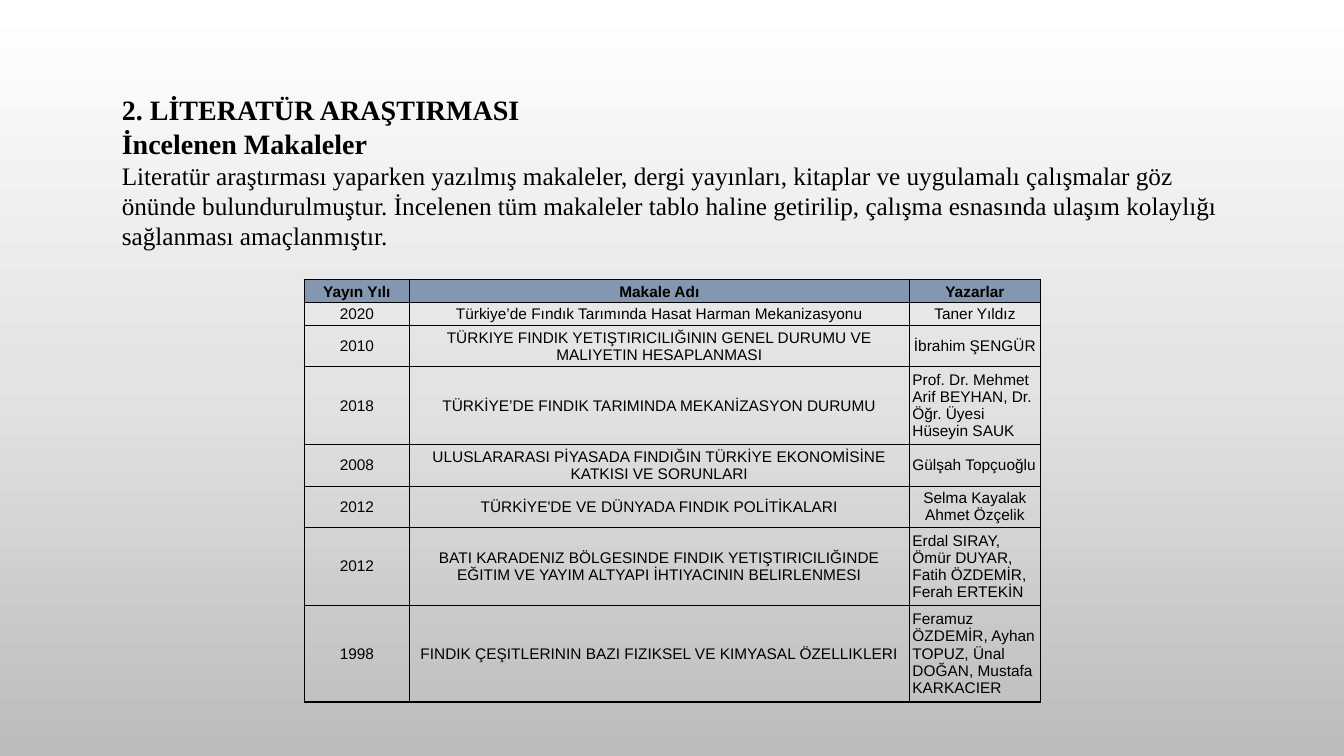
"""Build the literature review slide with its table of articles."""
from copy import deepcopy

from lxml.etree import SubElement
from pptx import Presentation
from pptx.dml.color import RGBColor
from pptx.enum.text import MSO_ANCHOR as Anchor, PP_ALIGN as Align
from pptx.oxml.ns import qn
from pptx.util import Inches, Pt

BLACK = RGBColor(0x00, 0x00, 0x00)
HEADER_BLUE = RGBColor(0x84, 0x97, 0xB0)
BACKGROUND = [
    (0, RGBColor(0xFF, 0xFF, 0xFF)),
    (0.5, RGBColor(0xE4, 0xE3, 0xE3)),
    (1, RGBColor(0xBD, 0xBC, 0xBC)),
]

INTRO = [
    ("2. LİTERATÜR ARAŞTIRMASI", 20, True),
    ("İncelenen Makaleler", 20, True),
    ("Literatür araştırması yaparken yazılmış makaleler, dergi yayınları, kitaplar ve "
     "uygulamalı çalışmalar göz önünde bulundurulmuştur. İncelenen tüm makaleler tablo "
     "haline getirilip, çalışma esnasında ulaşım kolaylığı sağlanması amaçlanmıştır.",
     18, False),
]
HEADER = ("Yayın Yılı", "Makale Adı", "Yazarlar")
ARTICLES = [
    ("2020", "Türkiye’de Fındık Tarımında Hasat Harman Mekanizasyonu", "Taner Yıldız"),
    ("2010", "TÜRKIYE FINDIK YETIŞTIRICILIĞININ GENEL DURUMU VE MALIYETIN HESAPLANMASI",
     "İbrahim ŞENGÜR"),
    ("2018", "TÜRKİYE’DE FINDIK TARIMINDA MEKANİZASYON DURUMU",
     "Prof. Dr. Mehmet Arif BEYHAN, Dr. Öğr. Üyesi Hüseyin SAUK"),
    ("2008", "ULUSLARARASI PİYASADA FINDIĞIN TÜRKİYE EKONOMİSİNE KATKISI VE SORUNLARI",
     "Gülşah Topçuoğlu"),
    ("2012", "TÜRKİYE'DE VE DÜNYADA FINDIK POLİTİKALARI", "Selma Kayalak\nAhmet Özçelik"),
    ("2012", "BATI KARADENIZ BÖLGESINDE FINDIK YETIŞTIRICILIĞINDE EĞITIM VE YAYIM "
     "ALTYAPI İHTIYACININ BELIRLENMESI",
     "Erdal SIRAY, Ömür DUYAR, Fatih ÖZDEMİR, Ferah ERTEKİN"),
    ("1998", "FINDIK ÇEŞITLERININ BAZI FIZIKSEL VE KIMYASAL ÖZELLIKLERI",
     "Feramuz ÖZDEMİR, Ayhan TOPUZ, Ünal DOĞAN, Mustafa KARKACIER"),
]
ROW_LINES = (1, 1, 2, 4, 2, 2, 4, 5)
COLUMN_WIDTHS = (1.04, 4.96, 1.3)
LEFT_ALIGNED_AUTHORS = (3, 4, 6, 7)
LINE_HEIGHT, ROW_PADDING = 0.18, 0.05


def write(p, text, *, size, font, bold=False, align=Align.LEFT):
    """Add one formatted run to a paragraph."""
    p.alignment = align
    r = p.add_run()
    r.text = text
    r.font.size, r.font.name, r.font.bold = Pt(size), font, bold
    r.font.color.rgb = BLACK


def paint_background(s):
    """Fill the slide with a vertical three-stop gradient."""
    fill = s.background.fill
    fill.gradient()
    fill.gradient_angle = 270
    stops = s.element.find(".//" + qn("a:gsLst"))
    stops.insert(1, deepcopy(stops[0]))
    for stop, (position, color) in zip(fill.gradient_stops, BACKGROUND):
        stop.position = position
        stop.color.rgb = color


def add_borders(cell):
    """Draw a one-point black line on each side of a cell."""
    tc_pr = cell._tc.get_or_add_tcPr()
    for side in ("lnL", "lnR", "lnT", "lnB"):
        line = SubElement(tc_pr, qn("a:" + side), w=str(Pt(1)))
        solid = SubElement(line, qn("a:solidFill"))
        SubElement(solid, qn("a:srgbClr"), val=str(BLACK))


def fill_cell(cell, text, is_header, align):
    """Format a table cell and write its paragraphs."""
    cell.margin_left = cell.margin_right = Inches(0.03)
    cell.margin_top = cell.margin_bottom = Inches(0.02)
    cell.vertical_anchor = Anchor.BOTTOM if is_header else Anchor.MIDDLE
    add_borders(cell)
    if is_header:
        cell.fill.solid()
        cell.fill.fore_color.rgb = HEADER_BLUE
    else:
        cell.fill.background()
    tf = cell.text_frame
    for i, line in enumerate(text.split("\n")):
        p = tf.add_paragraph() if i else tf.paragraphs[0]
        write(p, line, size=11, font="Arial", bold=is_header, align=align)


def add_intro(s):
    """Add the headings and the introductory paragraph."""
    sp = s.shapes.add_textbox(Inches(1.11), Inches(0.87), Inches(11.16), Inches(1.68))
    tf = sp.text_frame
    tf.word_wrap = True
    for i, (text, size, bold) in enumerate(INTRO):
        p = tf.add_paragraph() if i else tf.paragraphs[0]
        write(p, text, size=size, font="Times New Roman", bold=bold)


def add_articles(s):
    """Add the table of reviewed articles."""
    rows = [HEADER, *ARTICLES]
    heights = [LINE_HEIGHT * n + ROW_PADDING for n in ROW_LINES]
    table = s.shapes.add_table(
        len(rows), len(HEADER), Inches(3.02), Inches(2.77),
        Inches(sum(COLUMN_WIDTHS)), Inches(sum(heights))).table
    table.first_row = table.horz_banding = False
    for column, width in zip(table.columns, COLUMN_WIDTHS):
        column.width = Inches(width)
    for i, (row, height) in enumerate(zip(rows, heights)):
        table.rows[i].height = Inches(height)
        for j, text in enumerate(row):
            is_left = j == 2 and i in LEFT_ALIGNED_AUTHORS
            fill_cell(table.cell(i, j), text, i == 0,
                      Align.LEFT if is_left else Align.CENTER)


def main():
    """Create and save the presentation."""
    prs = Presentation()
    prs.slide_width, prs.slide_height = Inches(13.33), Inches(7.5)
    s = prs.slides.add_slide(prs.slide_layouts[6])
    paint_background(s)
    add_intro(s)
    add_articles(s)
    prs.save("out.pptx")


if __name__ == "__main__":
    main()
